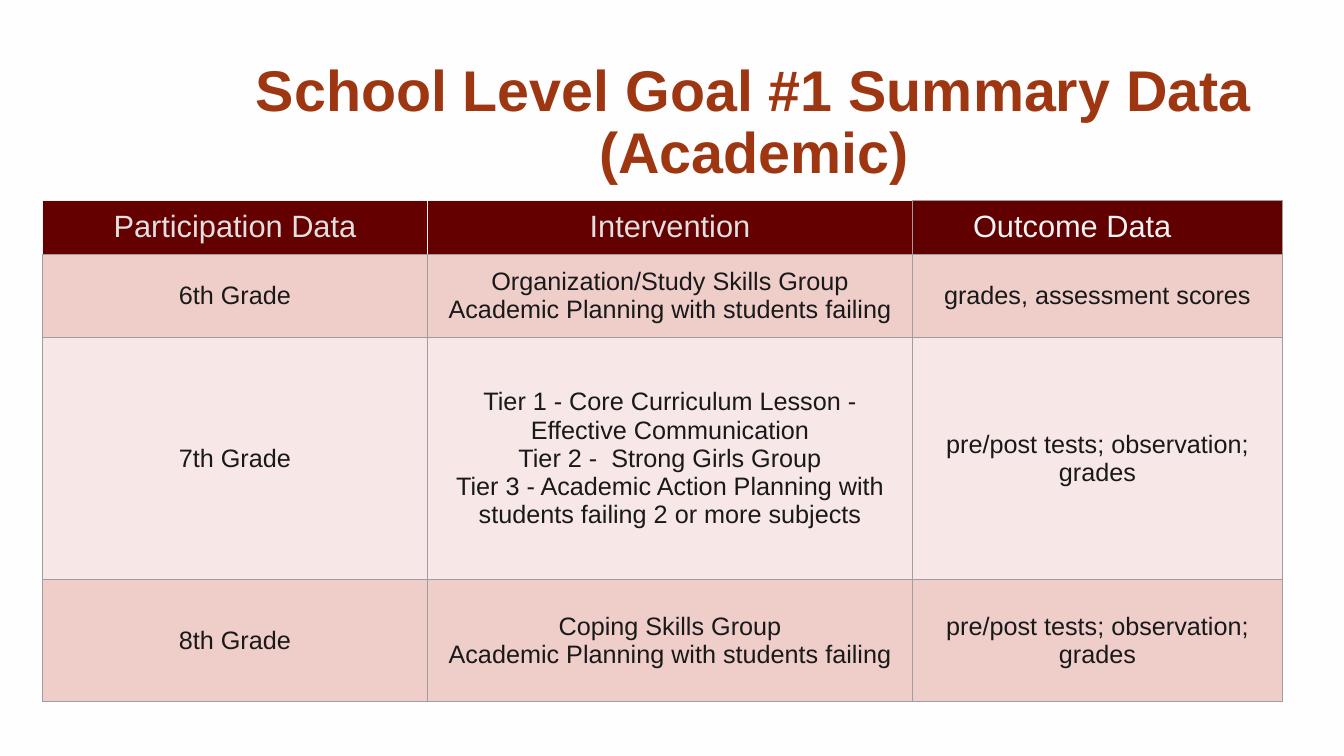
"""Builds the school goal summary slide with its table of grade interventions."""
from dataclasses import dataclass

from lxml.etree import SubElement
from pptx import Presentation
from pptx.dml.color import RGBColor
from pptx.enum.text import MSO_ANCHOR as Anchor, PP_ALIGN as Align
from pptx.oxml.ns import qn
from pptx.util import Inches, Pt


@dataclass(frozen=True)
class Theme:
    font: str = "Arial"
    background: str = "FEFEFE"
    title: str = "9E3611"
    header_text: str = "E1DFDF"
    light: str = "F3F3F3"
    body_text: str = "191919"
    header_fill: str = "640000"
    outcome_fill: str = "610000"
    bands: tuple = ("EFCECA", "F7E8E7")
    grid: str = "9E9E9E"
    title_size: int = 41
    header_size: int = 22
    body_size: int = 18


THEME = Theme()
COLUMN_WIDTHS = (3.82, 4.81, 3.67)
ROW_HEIGHTS = (0.53, 0.83, 2.4, 1.21)
HEADERS = (
    ("Participation Data", THEME.header_text, THEME.header_fill, "LTR"),
    ("Intervention", THEME.header_text, THEME.header_fill, "LT"),
    ("Outcome Data", THEME.light, THEME.outcome_fill, ""),
)
GRADES = (
    ("6th Grade",
     "Organization/Study Skills Group\nAcademic Planning with students failing",
     "grades, assessment scores"),
    ("7th Grade",
     "Tier 1 - Core Curriculum Lesson - Effective Communication\n"
     "Tier 2 -  Strong Girls Group\n"
     "Tier 3 - Academic Action Planning with students failing 2 or more subjects",
     "pre/post tests; observation; grades"),
    ("8th Grade",
     "Coping Skills Group\nAcademic Planning with students failing",
     "pre/post tests; observation; grades"),
)


def write_text(frame, text, size, color, bold=False, spacing=1.0):
    frame.text = text
    frame.word_wrap = True
    for para in frame.paragraphs:
        para.alignment = Align.CENTER
        para.line_spacing = spacing
        para.font.name = THEME.font
        para.font.size = Pt(size)
        para.font.bold = bold
        para.font.color.rgb = RGBColor.from_string(color)


def add_title(page, text):
    box = page.shapes.add_textbox(Inches(2.23), Inches(0.6), Inches(10.5), Inches(1.25))
    frame = box.text_frame
    frame.margin_left = frame.margin_right = 0
    frame.vertical_anchor = Anchor.MIDDLE
    write_text(frame, text, THEME.title_size, THEME.title, bold=True, spacing=0.9)


def set_borders(cell, light_sides):
    properties = cell._tc.get_or_add_tcPr()
    for side in "LRTB":
        color, width = (THEME.light, 1) if side in light_sides else (THEME.grid, 0.75)
        line = SubElement(properties, qn(f"a:ln{side}"), w=str(Pt(width)))
        SubElement(SubElement(line, qn("a:solidFill")), qn("a:srgbClr"), val=color)


def fill_cell(cell, text, size, color, fill, light_sides="", margin=0.1):
    set_borders(cell, light_sides)
    cell.fill.solid()
    cell.fill.fore_color.rgb = RGBColor.from_string(fill)
    cell.vertical_anchor = Anchor.MIDDLE
    cell.margin_left = cell.margin_right = Inches(0.1)
    cell.margin_top = cell.margin_bottom = Inches(margin)
    write_text(cell.text_frame, text, size, color)


def add_summary_table(page):
    table = page.shapes.add_table(
        len(ROW_HEIGHTS), len(COLUMN_WIDTHS), Inches(0.42), Inches(1.99),
        Inches(sum(COLUMN_WIDTHS)), Inches(sum(ROW_HEIGHTS))).table
    for column, width in zip(table.columns, COLUMN_WIDTHS):
        column.width = Inches(width)
    for row, height in zip(table.rows, ROW_HEIGHTS):
        row.height = Inches(height)
    for index, (text, color, fill, light_sides) in enumerate(HEADERS):
        fill_cell(table.cell(0, index), text, THEME.header_size, color, fill,
                  light_sides, margin=0.05)
    table.cell(0, 2).margin_right = Inches(0.6)
    for number, grade in enumerate(GRADES, start=1):
        band = THEME.bands[(number - 1) % 2]
        for index, text in enumerate(grade):
            fill_cell(table.cell(number, index), text, THEME.body_size,
                      THEME.body_text, band)


def main():
    deck = Presentation()
    deck.slide_width, deck.slide_height = Inches(13.33), Inches(7.5)
    page = deck.slides.add_slide(deck.slide_layouts[6])
    page.background.fill.solid()
    page.background.fill.fore_color.rgb = RGBColor.from_string(THEME.background)
    add_title(page, "School Level Goal #1 Summary Data (Academic)")
    add_summary_table(page)
    deck.save("out.pptx")


if __name__ == "__main__":
    main()
